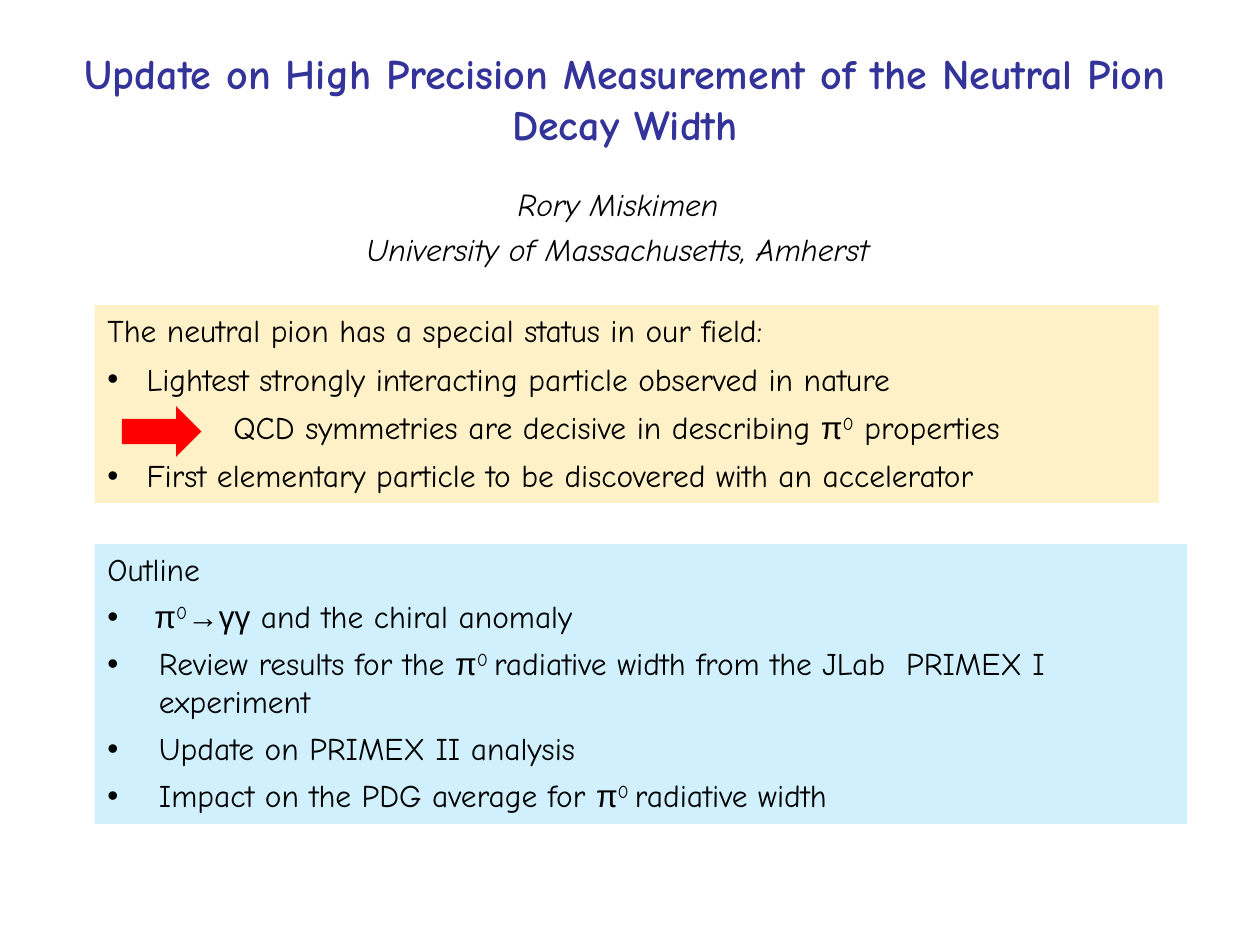
from lxml.etree import SubElement
from pptx import Presentation
from pptx.dml.color import RGBColor
from pptx.enum.shapes import MSO_SHAPE
from pptx.enum.text import MSO_ANCHOR, MSO_AUTO_SIZE, PP_ALIGN
from pptx.oxml.ns import qn
from pptx.util import Cm, Pt

NAVY = RGBColor(0x33, 0x33, 0x99)
BLACK = RGBColor(0, 0, 0)
AMBER = RGBColor(0xFF, 0xC0, 0x00)
SKY = RGBColor(0x00, 0xB0, 0xF0)
RED = RGBColor(0xFF, 0, 0)
FONT = "Comic Neue"

PION = [("π", "Arial"), ("0", "super")]
PION_SPACED = [("π", "Arial"), ("0 ", "super")]

STATUS = [
    (0, False, ["The neutral pion has a special status in our field:"]),
    (0.79, True, ["Lightest strongly interacting particle observed in nature"]),
    (2.54, False, ["QCD symmetries are decisive in describing ", *PION, " properties"]),
    (0.79, True, ["First elementary particle to be discovered with an accelerator"]),
]
OUTLINE = [
    (0, False, ["Outline"]),
    (0.95, True, [*PION, ("→", "Times New Roman"), ("γγ", "Arial"),
                  " and the chiral anomaly"]),
    (1.04, True, ["Review results for the ", *PION_SPACED,
                  "radiative width from the JLab  PRIMEX I experiment"]),
    (1.04, True, ["Update on PRIMEX II analysis"]),
    (1.04, True, ["Impact on the PDG average for ", *PION_SPACED, "radiative width"]),
]


def place(shape, left, top, width, height):
    shape.left, shape.top = Cm(left), Cm(top)
    shape.width, shape.height = Cm(width), Cm(height)
    frame = shape.text_frame
    frame.word_wrap = True
    frame.auto_size = MSO_AUTO_SIZE.NONE
    frame.vertical_anchor = MSO_ANCHOR.TOP
    return frame


def style_paragraph(para, size, color, before=0, after=0):
    para.space_before, para.space_after = Pt(before), Pt(after)
    para.font.name = FONT
    para.font.size = Pt(size)
    para.font.color.rgb = color


def set_indent(para, indent, bulleted):
    properties = para._p.get_or_add_pPr()
    properties.set("marL", str(Cm(indent)))
    properties.set("indent", str(-Cm(indent) if bulleted else 0))
    if bulleted:
        SubElement(properties, qn("a:buChar"), char="•")
    else:
        SubElement(properties, qn("a:buNone"))


def add_spans(para, pieces):
    for piece in pieces:
        text, style = (piece, None) if isinstance(piece, str) else piece
        span = para.add_run()
        span.text = text
        if style == "super":
            span.font._element.set("baseline", "30000")
        elif style:
            span.font.name = style


def fill_title(title, left, top, width, height):
    frame = place(title, left, top, width, height)
    frame.text = "Update on High Precision Measurement of the Neutral Pion Decay Width"
    para = frame.paragraphs[0]
    para.alignment = PP_ALIGN.CENTER
    style_paragraph(para, 24, NAVY)
    para.font.bold = True


def add_author(page, left, top, width, height):
    box = page.shapes.add_textbox(0, 0, 0, 0)
    frame = place(box, left, top, width, height)
    frame.text = "Rory Miskimen\nUniversity of Massachusetts, Amherst"
    for number, para in enumerate(frame.paragraphs):
        para.alignment = PP_ALIGN.CENTER
        style_paragraph(para, 18, BLACK, before=4 * number)
        para.font.italic = True


def fill_panel(panel, left, top, width, height, color, opacity, gap, lines):
    frame = place(panel, left, top, width, height)
    panel.fill.solid()
    panel.fill.fore_color.rgb = color
    tint = panel._element.spPr.find(qn("a:solidFill"))[0]
    SubElement(tint, qn("a:alpha"), val=str(opacity * 1000))
    for number, (indent, bulleted, pieces) in enumerate(lines):
        para = frame.add_paragraph() if number else frame.paragraphs[0]
        style_paragraph(para, 18, BLACK, after=gap)
        set_indent(para, indent, bulleted)
        add_spans(para, pieces)


def fill_status(page, panel, left, top, width, height):
    fill_panel(panel, left, top, width, height, AMBER, 22, 6, STATUS)
    arrow = page.shapes.add_shape(MSO_SHAPE.RIGHT_ARROW, Cm(left + 0.55),
                                  Cm(top + 2.04), Cm(1.6), Cm(1.02))
    arrow.shadow.inherit = False
    arrow.fill.solid()
    arrow.fill.fore_color.rgb = RED
    arrow.line.fill.background()


def main():
    deck = Presentation()
    deck.slide_width, deck.slide_height = Cm(25.4), Cm(19.05)
    page = deck.slides.add_slide(deck.slide_layouts.get_by_name("Two Content"))
    title, status, outline = page.placeholders
    fill_title(title, 1.27, 0.84, 22.66, 2.31)
    add_author(page, 5.26, 3.61, 14.4, 1.96)
    fill_panel(outline, 1.91, 10.97, 22.02, 5.64, SKY, 19, 5.25, OUTLINE)
    fill_status(page, status, 1.91, 6.15, 21.46, 3.99)
    deck.save("out.pptx")


if __name__ == "__main__":
    main()
